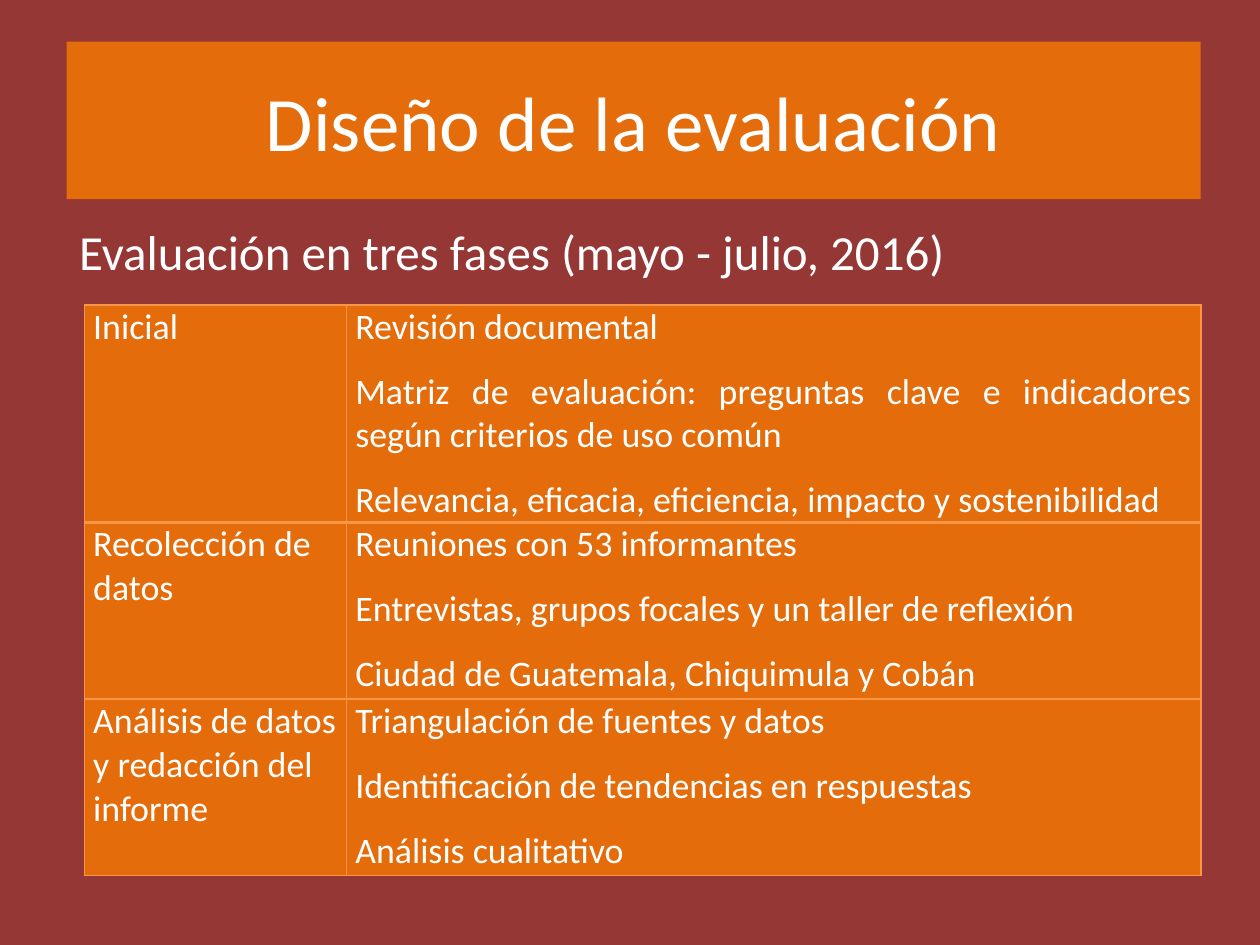
from dataclasses import dataclass

from lxml.etree import SubElement
from pptx import Presentation
from pptx.dml.color import RGBColor
from pptx.enum.shapes import MSO_SHAPE
from pptx.enum.text import MSO_ANCHOR, PP_ALIGN
from pptx.oxml.ns import qn
from pptx.util import Inches, Pt

TITLE = "Diseño de la evaluación"
SUBTITLE = "Evaluación en tres fases (mayo - julio, 2016)"
PHASES = [
    ("Inicial", [
        "Revisión documental",
        "Matriz de evaluación: preguntas clave e indicadores según criterios de uso común",
        "Relevancia, eficacia, eficiencia, impacto y sostenibilidad",
    ]),
    ("Recolección de datos", [
        "Reuniones con 53 informantes",
        "Entrevistas, grupos focales y un taller de reflexión",
        "Ciudad de Guatemala, Chiquimula y Cobán",
    ]),
    ("Análisis de datos y redacción del informe", [
        "Triangulación de fuentes y datos",
        "Identificación de tendencias en respuestas",
        "Análisis cualitativo",
    ]),
]
COLUMN_WIDTHS = (2.08, 6.78)
ROW_HEIGHTS = (1.69, 1.4, 1.4)


@dataclass(frozen=True)
class Theme:
    """Colours, font and type sizes of the slide."""
    font: str = "Calibri"
    background: str = "953735"
    panel: str = "E46C0A"
    border: str = "F79646"
    text: str = "FFFFFF"
    title_size: float = 44
    subtitle_size: float = 28
    table_size: float = 20.5


THEME = Theme()


def paint(fill, colour):
    fill.solid()
    fill.fore_color.rgb = RGBColor.from_string(colour)


def write(frame, lines, size, align, spacing=0):
    frame.word_wrap = True
    frame.text = "\n".join(lines)
    for para in frame.paragraphs:
        para.alignment = align
        para.space_before = para.space_after = Pt(spacing)
        for span in para.runs:
            span.font.name = THEME.font
            span.font.size = Pt(size)
            span.font.color.rgb = RGBColor.from_string(THEME.text)


def outline(cell, top, bottom):
    properties = cell._tc.get_or_add_tcPr()
    widths = {"a:lnL": 1, "a:lnR": 1, "a:lnT": top, "a:lnB": bottom}
    for position, (side, width) in enumerate(widths.items()):
        line = SubElement(properties, qn(side), w=str(Pt(width)))
        SubElement(SubElement(line, qn("a:solidFill")), qn("a:srgbClr"), val=THEME.border)
        properties.insert(position, line)


def add_title(page):
    box = page.shapes.add_shape(
        MSO_SHAPE.RECTANGLE, Inches(0.53), Inches(0.33), Inches(9), Inches(1.25))
    box.shadow.inherit = False
    paint(box.fill, THEME.panel)
    box.line.fill.background()
    box.text_frame.vertical_anchor = MSO_ANCHOR.MIDDLE
    write(box.text_frame, [TITLE], THEME.title_size, PP_ALIGN.CENTER)


def add_subtitle(page):
    box = page.shapes.add_textbox(Inches(0.53), Inches(1.71), Inches(9.14), Inches(0.57))
    box.text_frame.vertical_anchor = MSO_ANCHOR.MIDDLE
    write(box.text_frame, [SUBTITLE], THEME.subtitle_size, PP_ALIGN.JUSTIFY)


def add_phases(page):
    table = page.shapes.add_table(
        len(PHASES), len(COLUMN_WIDTHS), Inches(0.67), Inches(2.42),
        Inches(sum(COLUMN_WIDTHS)), Inches(sum(ROW_HEIGHTS))).table
    table.first_row = table.horz_banding = False
    for column, width in zip(table.columns, COLUMN_WIDTHS):
        column.width = Inches(width)
    for index, (row, height, (phase, tasks)) in enumerate(zip(table.rows, ROW_HEIGHTS, PHASES)):
        row.height = Inches(height)
        contents = (([phase], PP_ALIGN.LEFT), (tasks, PP_ALIGN.JUSTIFY))
        for cell, (lines, align) in zip(row.cells, contents):
            cell.margin_left = cell.margin_right = Inches(0.07)
            cell.margin_top = cell.margin_bottom = 0
            paint(cell.fill, THEME.panel)
            outline(cell, top=2 if index == 1 else 1, bottom=2 if index == 0 else 1)
            write(cell.text_frame, lines, THEME.table_size, align, spacing=6)


def main():
    """Build the evaluation design slide."""
    deck = Presentation()
    deck.slide_width, deck.slide_height = Inches(10), Inches(7.5)
    page = deck.slides.add_slide(deck.slide_layouts[6])
    paint(page.background.fill, THEME.background)
    add_title(page)
    add_phases(page)
    add_subtitle(page)
    deck.save("out.pptx")


if __name__ == "__main__":
    main()
